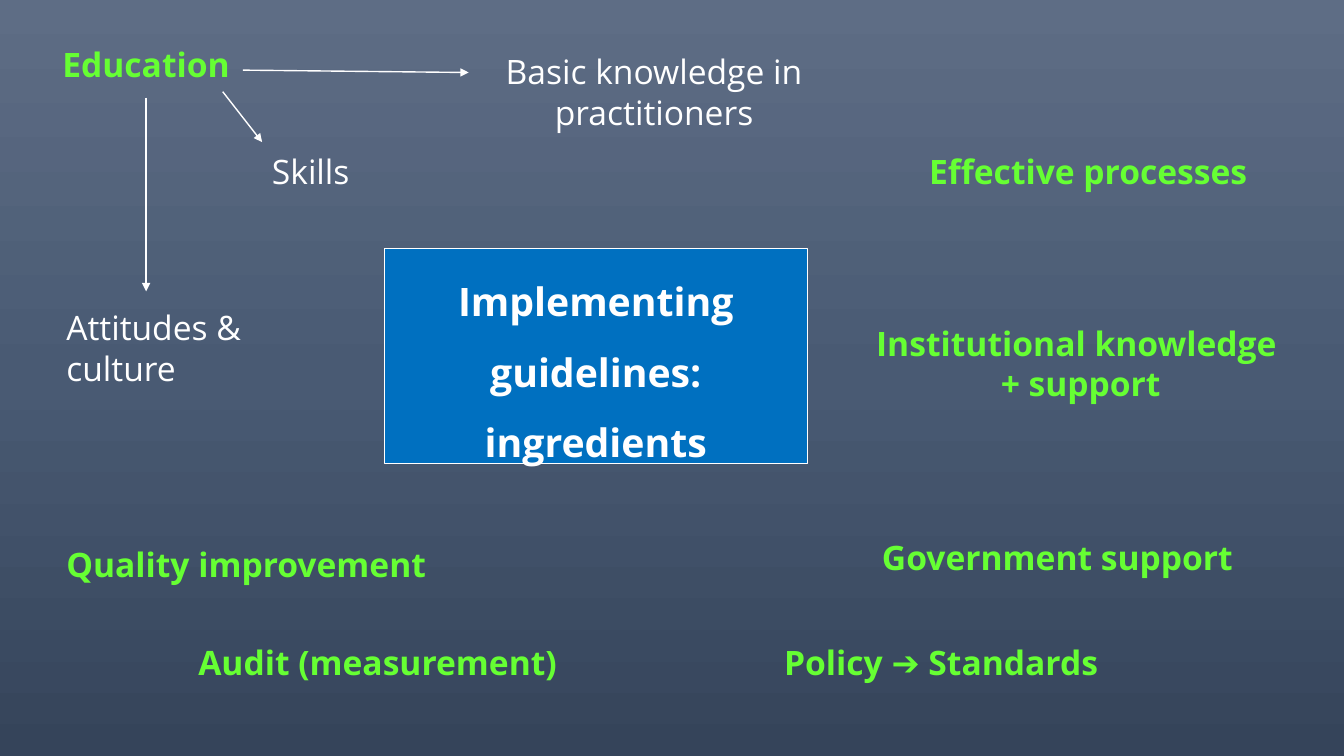
from copy import deepcopy
from dataclasses import dataclass

from pptx import Presentation
from pptx.dml.color import RGBColor as RGB
from pptx.enum.shapes import MSO_CONNECTOR as Connector
from pptx.enum.text import MSO_ANCHOR as Anchor, MSO_AUTO_SIZE as AutoSize, PP_ALIGN as Align
from pptx.oxml.ns import qn
from pptx.util import Pt
from lxml.etree import SubElement


@dataclass(frozen=True)
class Theme:
    font: str = "Open Sans"
    title_size: float = 28
    text_size: float = 24
    plain: str = "FFFFFF"
    accent: str = "66FF33"
    panel: str = "0070C0"
    backdrop: tuple = ("5E6D85", "495A73", "35445A")
    title_spacing: float = 1.5
    border: float = 0.75
    arrow: float = 1


class IngredientSlide:
    def __init__(self, slide, theme):
        self.slide = slide
        self.theme = theme

    def background(self):
        fill = self.slide.background.fill
        fill.gradient()
        fill.gradient_angle = 270
        first = self.slide.element.find(".//" + qn("a:gs"))
        first.addnext(deepcopy(first))
        for index, (stop, color) in enumerate(zip(fill.gradient_stops, self.theme.backdrop)):
            stop.position = index / 2
            stop.color.rgb = RGB.from_string(color)

    def place(self, shape, left, top, width, height):
        shape.left, shape.top = Pt(left), Pt(top)
        shape.width, shape.height = Pt(width), Pt(height)

    def set_text(self, frame, text, size, color, bold, align):
        frame.text = text
        frame.word_wrap = True
        frame.vertical_anchor = Anchor.TOP
        frame.margin_left = frame.margin_right = Pt(7.2)
        frame.margin_top = frame.margin_bottom = Pt(3.6)
        for paragraph in frame.paragraphs:
            paragraph.alignment = align
            for run in paragraph.runs:
                run.font.name = self.theme.font
                run.font.size = Pt(size)
                run.font.bold = bold
                run.font.color.rgb = RGB.from_string(color)

    def title(self, text, left, top, width, height):
        theme = self.theme
        panel = self.slide.shapes.title
        self.place(panel, left, top, width, height)
        panel.fill.solid()
        panel.fill.fore_color.rgb = RGB.from_string(theme.panel)
        panel.line.color.rgb = RGB.from_string(theme.plain)
        panel.line.width = Pt(theme.border)
        self.set_text(panel.text_frame, text, theme.title_size, theme.plain, True, Align.CENTER)
        panel.text_frame.auto_size = AutoSize.NONE
        for paragraph in panel.text_frame.paragraphs:
            paragraph.line_spacing = theme.title_spacing

    def label(self, text, left, top, width, height, key=False, align=Align.LEFT):
        theme = self.theme
        box = self.slide.shapes.add_textbox(Pt(left), Pt(top), Pt(width), Pt(height))
        color = theme.accent if key else theme.plain
        self.set_text(box.text_frame, text, theme.text_size, color, key, align)
        box.text_frame.auto_size = AutoSize.SHAPE_TO_FIT_TEXT

    def arrow(self, x1, y1, x2, y2):
        link = self.slide.shapes.add_connector(Connector.STRAIGHT, Pt(x1), Pt(y1), Pt(x2), Pt(y2))
        link.line.color.rgb = RGB.from_string(self.theme.plain)
        link.line.width = Pt(self.theme.arrow)
        outline = link.element.find(".//" + qn("a:ln"))
        SubElement(outline, qn("a:tailEnd"), type="triangle")
        SubElement(outline.getparent(), qn("a:effectLst"))


def main():
    deck = Presentation()
    deck.slide_width, deck.slide_height = Pt(960), Pt(540)
    page = IngredientSlide(deck.slides.add_slide(deck.slide_layouts[5]), Theme())
    page.background()
    page.title("Implementing\nguidelines: ingredients", 274.3, 177.8, 302.4, 153.4)

    narrow, medium, wide = 285.8, 357.1, 502.6
    one_line, two_lines = 36.4, 65.4
    center = Align.CENTER

    aspects = [
        ("Attitudes &\nculture", 40.3, 216, two_lines, Align.LEFT),
        ("Skills", 187.2, 104.4, one_line, Align.LEFT),
        ("Basic knowledge in practitioners", 288.7, 33.1, two_lines, center),
    ]
    for text, left, top, height, align in aspects:
        page.label(text, left, top, medium, height, align=align)

    ingredients = [
        ("Education", -74.2, 28.1, medium, one_line, center),
        ("Effective processes", 656.6, 104.4, narrow, one_line, Align.LEFT),
        ("Institutional knowledge \n+ support", 520.6, 226.8, wide, two_lines, center),
        ("Government support", 504, 380.2, wide, one_line, center),
        ("Policy ➔ Standards", 553, 455, medium, one_line, Align.LEFT),
        ("Audit (measurement)", 134.6, 455, medium, one_line, Align.LEFT),
        ("Quality improvement", 40.3, 385.2, medium, one_line, Align.LEFT),
    ]
    for text, left, top, width, height, align in ingredients:
        page.label(text, left, top, width, height, key=True, align=align)

    education_links = [
        (104.4, 69.8, 104.4, 208.1),
        (159.1, 65.5, 187.2, 101.5),
        (173.5, 50.1, 334.8, 51.8),
    ]
    for ends in education_links:
        page.arrow(*ends)

    deck.save("out.pptx")


if __name__ == "__main__":
    main()
